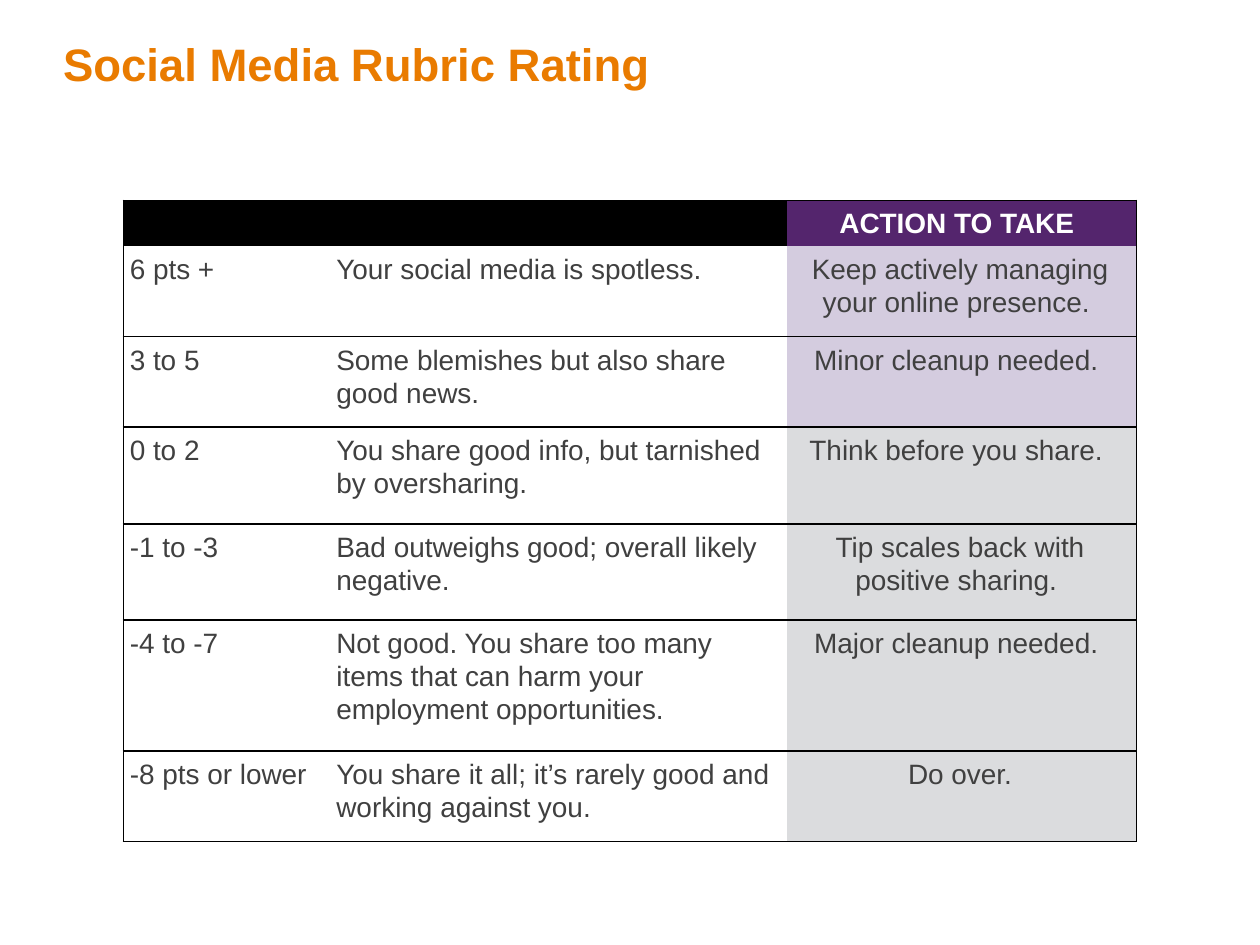
"""Build the social media rubric rating slide."""
import lxml.etree
import pptx
import pptx.dml.color
import pptx.enum.text
import pptx.oxml.ns
import pptx.util

Inches = pptx.util.Inches
RGBColor = pptx.dml.color.RGBColor
PP_ALIGN = pptx.enum.text.PP_ALIGN

ORANGE = RGBColor(0xE9, 0x7B, 0x00)
BLACK = RGBColor(0x00, 0x00, 0x00)
WHITE = RGBColor(0xFF, 0xFF, 0xFF)
PURPLE = RGBColor(0x54, 0x25, 0x6D)
LAVENDER = RGBColor(0xD4, 0xCC, 0xDF)
GRAY = RGBColor(0xDB, 0xDC, 0xDE)
DARK_GRAY = RGBColor(0x40, 0x40, 0x40)

FONT = "Arial"
COLUMN_WIDTHS = (1.69, 3.58, 2.77)
HEADER_HEIGHT = 0.36
RATINGS = (
    ("6 pts +", "Your social media is spotless.",
     "Keep actively managing your online presence. ", LAVENDER, 0.72),
    ("3 to 5", "Some blemishes but also share good news.",
     "Minor cleanup needed. ", LAVENDER, 0.72),
    ("0 to 2", "You share good info, but tarnished by oversharing.",
     "Think before you share. ", GRAY, 0.77),
    ("-1 to -3", "Bad outweighs good; overall likely negative.",
     "Tip scales back with positive sharing. ", GRAY, 0.76),
    ("-4 to -7", "Not good. You share too many items that can harm your employment opportunities.",
     "Major cleanup needed. ", GRAY, 1.04),
    ("-8 pts or lower", "You share it all; it’s rarely good and working against you.",
     "Do over.", GRAY, 0.72),
)


def add_run(paragraph, text, size, color, bold=False):
    run = paragraph.add_run()
    run.text = text
    run.font.name = FONT
    run.font.size = pptx.util.Pt(size)
    run.font.bold = bold
    run.font.color.rgb = color


def add_title(slide, text):
    title = slide.shapes.add_textbox(Inches(0.5), Inches(0), Inches(8.25), Inches(1))
    frame = title.text_frame
    frame.word_wrap = True
    frame.vertical_anchor = pptx.enum.text.MSO_ANCHOR.MIDDLE
    frame.margin_left = frame.margin_right = frame.margin_top = frame.margin_bottom = 0
    heading = frame.paragraphs[0]
    heading.line_spacing = pptx.util.Pt(31)
    add_run(heading, text, 26, ORANGE, bold=True)


def set_borders(cell, drawn_edges):
    qn = pptx.oxml.ns.qn
    properties = cell._tc.get_or_add_tcPr()
    for edge in "LRTB":
        line = lxml.etree.SubElement(properties, qn(f"a:ln{edge}"), w="12700")
        if edge in drawn_edges:
            fill = lxml.etree.SubElement(line, qn("a:solidFill"))
            lxml.etree.SubElement(fill, qn("a:srgbClr"), val=str(BLACK))
        else:
            lxml.etree.SubElement(line, qn("a:noFill"))


def style_cell(cell, fill, edges):
    set_borders(cell, edges)
    cell.fill.solid()
    cell.fill.fore_color.rgb = fill
    cell.margin_left = cell.margin_bottom = 0
    cell.margin_top = Inches(0.05)
    cell.margin_right = Inches(0.08)


def write_cell(cell, text, color, indent=0.0, align=PP_ALIGN.LEFT, bold=False):
    paragraph = cell.text_frame.paragraphs[0]
    paragraph.alignment = align
    paragraph.line_spacing = 1.07
    paragraph._p.get_or_add_pPr().set("marL", str(Inches(indent)))
    add_run(paragraph, text, 16, color, bold)


def fill_header(table):
    style_cell(table.cell(0, 0), BLACK, "LT")
    style_cell(table.cell(0, 1), BLACK, "T")
    table.cell(0, 0).merge(table.cell(0, 1))
    action = table.cell(0, 2)
    style_cell(action, PURPLE, "TR")
    write_cell(action, "ACTION TO TAKE ", WHITE, 0.06, PP_ALIGN.CENTER, bold=True)


def fill_rating(table, row, score, meaning, action, action_fill):
    top = "T" if row > 1 else ""
    columns = (
        (score, WHITE, "LB", 0.05, PP_ALIGN.LEFT),
        (meaning, WHITE, "B", 0, PP_ALIGN.LEFT),
        (action, action_fill, "RB", 0.05, PP_ALIGN.CENTER),
    )
    for column, (text, fill, edges, indent, align) in enumerate(columns):
        cell = table.cell(row, column)
        style_cell(cell, fill, edges + top)
        write_cell(cell, text, DARK_GRAY, indent, align)


def add_rubric(slide):
    heights = [HEADER_HEIGHT] + [rating[-1] for rating in RATINGS]
    table = slide.shapes.add_table(
        len(heights), len(COLUMN_WIDTHS), Inches(0.98), Inches(1.59),
        Inches(sum(COLUMN_WIDTHS)), Inches(sum(heights))).table
    table.horz_banding = False
    table.first_row = False
    for column, width in zip(table.columns, COLUMN_WIDTHS):
        column.width = Inches(width)
    for row, height in zip(table.rows, heights):
        row.height = Inches(height)
    fill_header(table)
    for row, (score, meaning, action, action_fill, _) in enumerate(RATINGS, start=1):
        fill_rating(table, row, score, meaning, action, action_fill)


def main():
    presentation = pptx.Presentation()
    presentation.slide_width = Inches(10)
    presentation.slide_height = Inches(7.5)
    slide = presentation.slides.add_slide(presentation.slide_layouts[6])
    add_title(slide, "Social Media Rubric Rating")
    add_rubric(slide)
    presentation.save("out.pptx")


if __name__ == "__main__":
    main()
